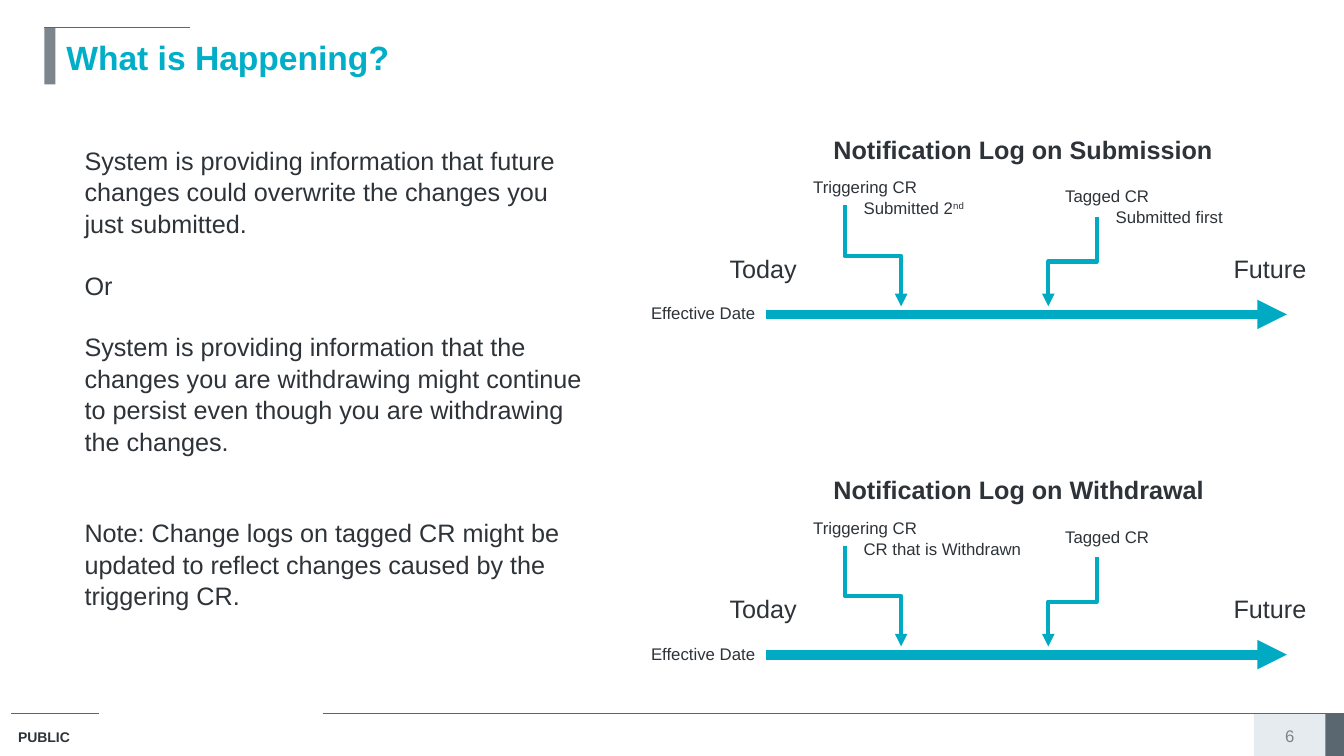
from dataclasses import dataclass
from typing import Any

from lxml.etree import SubElement
from pptx import Presentation
from pptx.dml.color import RGBColor as RGB
from pptx.enum.shapes import MSO_CONNECTOR as LINK, MSO_SHAPE as FORM
from pptx.enum.text import MSO_ANCHOR as ANCHOR, PP_ALIGN as ALIGN
from pptx.oxml.ns import qn
from pptx.util import Pt

DARK, GREY, SLATE, PALE = "2D3338", "7C858C", "5B6770", "E6EBF0"
CYAN, TEAL = "00AEC7", "00AAC3"


@dataclass
class Para:
    text: str
    before: float = 0
    indent: float = 0
    raised: str = ""


@dataclass
class Label:
    left: float
    top: float
    width: float
    height: float
    paras: list[Para]
    size: float = 18
    color: str = DARK
    bold: bool = False
    align: Any = ALIGN.LEFT
    anchor: Any = ANCHOR.TOP


@dataclass
class Bar:
    left: float
    top: float
    width: float
    height: float
    color: str


@dataclass
class Rule:
    left: float
    right: float
    top: float


@dataclass
class Panel:
    top: float
    title: str
    trigger: list[Para]
    tagged: list[Para]


def tint(code: str) -> RGB:
    return RGB.from_string(code)


def write(label: Label) -> None:
    box = slide.shapes.add_textbox(
        Pt(label.left), Pt(label.top), Pt(label.width), Pt(label.height))
    frame = box.text_frame
    frame.word_wrap = True
    frame.vertical_anchor = label.anchor
    style = {"name": "Arial", "size": Pt(label.size), "bold": label.bold}
    for i, item in enumerate(label.paras):
        para = frame.add_paragraph() if i else frame.paragraphs[0]
        layout = {"alignment": label.align, "line_spacing": 1.04}
        if item.before:
            layout["space_before"] = Pt(item.before)
        for key, value in layout.items():
            setattr(para, key, value)
        if item.indent:
            para.level = 1
            props = para._p.get_or_add_pPr()
            props.set("marL", str(Pt(item.indent)))
            props.set("indent", "0")
        for text, base in ((item.text, 0), (item.raised, 30000)):
            if not text:
                continue
            run = para.add_run()
            run.text = text
            for key, value in style.items():
                setattr(run.font, key, value)
            run.font.color.rgb = tint(label.color)
            if base:
                run._r.get_or_add_rPr().set("baseline", str(base))


def block(bar: Bar) -> None:
    shape = slide.shapes.add_shape(
        FORM.RECTANGLE, Pt(bar.left), Pt(bar.top), Pt(bar.width), Pt(bar.height))
    shape.shadow.inherit = False
    shape.fill.solid()
    shape.fill.fore_color.rgb = tint(bar.color)
    shape.line.fill.background()


def link(kind: Any, x1: float, y1: float, x2: float, y2: float,
         color: str, width: float, arrow: bool = False) -> Any:
    line = slide.shapes.add_connector(kind, Pt(x1), Pt(y1), Pt(x2), Pt(y2))
    line.line.color.rgb = tint(color)
    line.line.width = Pt(width)
    if arrow:
        SubElement(line.line._get_or_add_ln(), qn("a:tailEnd"), type="triangle")
    SubElement(line._element.spPr, qn("a:effectLst"))
    return line


def elbow(x1: float, y1: float, x2: float, y2: float) -> None:
    """Draw a down-across-down arrow: a flat elbow turned about its centre."""
    midx, midy = (x1 + x2) / 2, (y1 + y2) / 2
    half, rise = (y2 - y1) / 2, abs(x2 - x1) / 2
    side = 1 if x2 > x1 else -1
    line = link(LINK.ELBOW, midx + side * half, midy - rise,
                midx - side * half, midy + rise, TEAL, 3, True)
    turn = 270 if side > 0 else 90
    line._element.spPr.find(qn("a:xfrm")).set("rot", str(turn * 60000))


def chart(panel: Panel) -> None:
    top = panel.top
    write(Label(588.2, top, 294.5, 28.8, [Para(panel.title)], bold=True))
    link(LINK.STRAIGHT, 547.2, top + 133.2, 919.2, top + 133.2, TEAL, 7, True)
    for text, left, width in (("Today", 514, 66.2), ("Future", 874, 72.7)):
        write(Label(left, top + 85, width, 28.8, [Para(text)]))
    for paras, left, drop in ((panel.tagged, 753.8, 37.4),
                              (panel.trigger, 573.8, 31)):
        write(Label(left, top + drop, 167.8, 21.6 if len(paras) == 1 else 36,
                    paras, size=12))
    write(Label(458, top + 121, 89.3, 21.6, [Para("Effective Date")], size=12))
    elbow(783.4, top + 63.4, 748.8, top + 127.4)
    elbow(603.4, top + 55.4, 643.7, top + 127.4)


bars = [
    Bar(895.7, 509.8, 56.2, 30.2, PALE),
    Bar(946.8, 509.8, 13.2, 30.2, SLATE),
    Bar(31.7, 19.4, 7.9, 41, GREY),
]
rules = [Rule(7.9, 70.6, 509.8), Rule(230.4, 960, 509.8), Rule(31.7, 136, 19.4)]
labels = [
    Label(5.8, 516.2, 74.2, 20.2, [Para("PUBLIC")], size=10, bold=True),
    Label(40.3, 19.4, 887.8, 41, [Para("What is Happening?")], size=24,
          color=CYAN, bold=True, anchor=ANCHOR.MIDDLE),
    Label(895.7, 517, 51.1, 17.3, [Para("6")], size=12, color=GREY,
          align=ALIGN.CENTER, anchor=ANCHOR.MIDDLE),
    Label(53.3, 99.4, 378, 399.6, [
        Para("System is providing information that future changes could "
             "overwrite the changes you just submitted."),
        Para("Or", before=21.6),
        Para("System is providing information that the changes you are "
             "withdrawing might continue to persist even though you are "
             "withdrawing the changes.", before=21.6),
        Para("Note: Change logs on tagged CR might be updated to reflect "
             "changes caused by the triggering CR.", before=43.2),
    ]),
]
panels = [
    Panel(91.4, "Notification Log on Submission",
          [Para("Triggering CR"), Para("Submitted 2", indent=36, raised="nd")],
          [Para("Tagged CR"), Para("Submitted first", indent=36)]),
    Panel(334.4, "Notification Log on Withdrawal",
          [Para("Triggering CR"), Para("CR that is Withdrawn", indent=36)],
          [Para("Tagged CR")]),
]

deck = Presentation()
deck.slide_width, deck.slide_height = Pt(960), Pt(540)
slide = deck.slides.add_slide(deck.slide_layouts[6])
for bar in bars:
    block(bar)
for rule in rules:
    link(LINK.STRAIGHT, rule.left, rule.top, rule.right, rule.top, SLATE, 0.75)
for label in labels:
    write(label)
for panel in panels:
    chart(panel)
deck.save("out.pptx")
